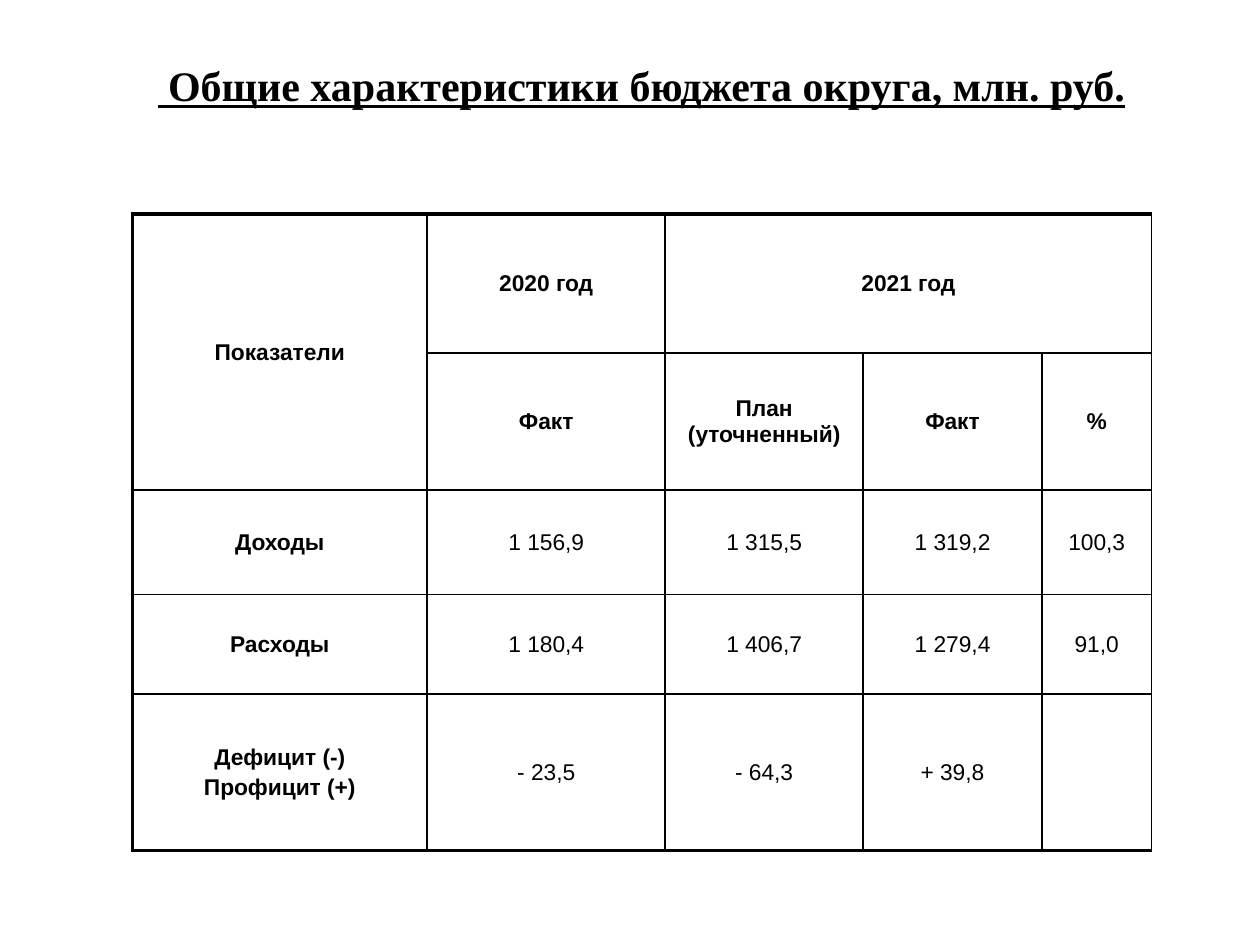
from dataclasses import dataclass

from lxml.etree import SubElement
from pptx import Presentation
from pptx.dml.color import RGBColor
from pptx.enum.text import MSO_ANCHOR, MSO_AUTO_SIZE, PP_ALIGN
from pptx.oxml.ns import qn
from pptx.util import Inches, Pt


@dataclass(frozen=True)
class Theme:
    ink: str = "000000"
    title_font: str = "Times New Roman"
    table_font: str = "Arial"
    title_size: float = 24
    table_size: float = 13
    paragraph_gap: float = 2.6
    thin_line: float = 1
    thick_line: float = 2.25


THEME = Theme()
TITLE = " Общие характеристики бюджета округа, млн. руб."
TITLE_BOX = (0.65, 0.12, 8.88, 1.11)
TABLE_ORIGIN = (1.05, 1.7)
COLUMN_WIDTHS = [2.34, 1.89, 1.57, 1.42, 0.87]
ROW_HEIGHTS = [1.1, 1.09, 0.83, 0.79, 1.24]
HEADER_ROWS = 2
ROWS = [
    ["Показатели", "2020 год", "2021 год", "", ""],
    ["", "Факт", "План (уточненный)", "Факт", "%"],
    ["Доходы", "1 156,9", "1 315,5", "1 319,2", "100,3"],
    ["Расходы", "1 180,4", "1 406,7", "1 279,4", "91,0"],
    ["Дефицит (-)\nПрофицит (+)", "- 23,5", "- 64,3", "+ 39,8", ""],
]
MERGES = [((0, 0), (1, 0)), ((0, 2), (0, 4))]


def write_text(frame, text, *, font, size, bold=False, underline=False):
    frame.word_wrap = True
    for index, line in enumerate(text.split("\n")):
        paragraph = frame.paragraphs[0] if index == 0 else frame.add_paragraph()
        paragraph.alignment = PP_ALIGN.CENTER
        paragraph.space_before = Pt(THEME.paragraph_gap if index else 0)
        paragraph.font.size = Pt(size)
        if not line:
            continue
        run = paragraph.add_run()
        run.text = line
        run.font.name = font
        run.font.size = Pt(size)
        run.font.bold = bold
        run.font.underline = underline
        run.font.color.rgb = RGBColor.from_string(THEME.ink)


def set_borders(cell, widths):
    """Draw the left, right, top and bottom lines, in that order."""
    properties = cell._tc.get_or_add_tcPr()
    for side, width in zip("LRTB", widths):
        line = SubElement(properties, qn(f"a:ln{side}"), w=str(Pt(width)))
        fill = SubElement(line, qn("a:solidFill"))
        SubElement(fill, qn("a:srgbClr"), val=THEME.ink)


def add_title(slide):
    title = slide.shapes.title
    title.left, title.top, title.width, title.height = map(Inches, TITLE_BOX)
    frame = title.text_frame
    frame.auto_size = MSO_AUTO_SIZE.NONE
    frame.vertical_anchor = MSO_ANCHOR.MIDDLE
    write_text(frame, TITLE, font=THEME.title_font, size=THEME.title_size,
               bold=True, underline=True)


def add_budget_table(slide):
    size = (sum(COLUMN_WIDTHS), sum(ROW_HEIGHTS))
    table = slide.shapes.add_table(len(ROWS), len(COLUMN_WIDTHS),
                                   *map(Inches, TABLE_ORIGIN + size)).table
    table.first_row = table.horz_banding = False
    for column, width in zip(table.columns, COLUMN_WIDTHS):
        column.width = Inches(width)
    for row, height in zip(table.rows, ROW_HEIGHTS):
        row.height = Inches(height)

    thin, thick = THEME.thin_line, THEME.thick_line
    for r, values in enumerate(ROWS):
        for c, value in enumerate(values):
            cell = table.cell(r, c)
            cell.vertical_anchor = MSO_ANCHOR.MIDDLE
            cell.margin_left = cell.margin_right = Inches(0.09)
            set_borders(cell, (thick if c == 0 else thin,
                               thin,
                               thick if r == 0 else thin,
                               thick if r == len(ROWS) - 1 else thin))
            cell.fill.background()
            write_text(cell.text_frame, value, font=THEME.table_font,
                       size=THEME.table_size, bold=r < HEADER_ROWS or c == 0)
    for first, last in MERGES:
        table.cell(*first).merge(table.cell(*last))


def main():
    presentation = Presentation()
    presentation.slide_width, presentation.slide_height = Inches(10), Inches(7.5)
    slide = presentation.slides.add_slide(presentation.slide_layouts[5])
    add_title(slide)
    add_budget_table(slide)
    presentation.save("out.pptx")


if __name__ == "__main__":
    main()
